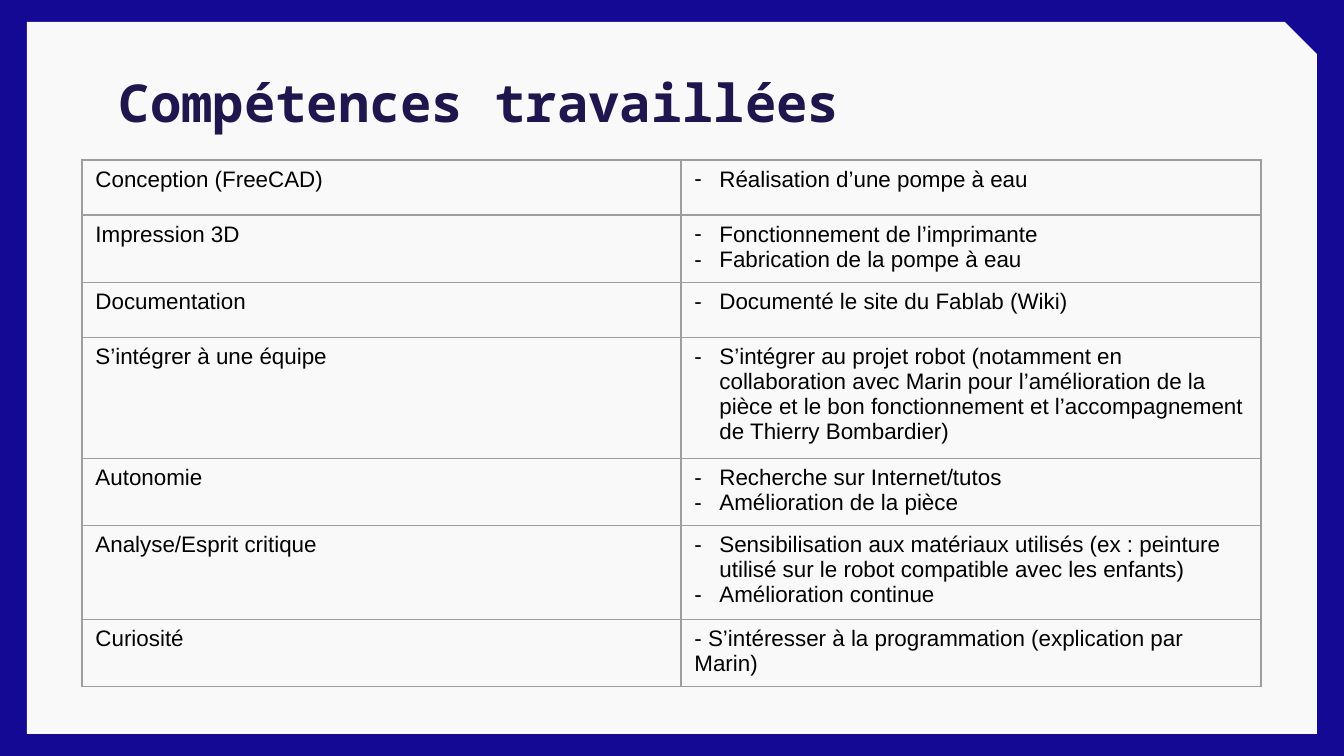
"""Build the slide listing the skills practised, as a two-column table."""
from dataclasses import dataclass

from lxml.etree import SubElement
from pptx import Presentation
from pptx.dml.color import RGBColor
from pptx.enum.shapes import MSO_SHAPE
from pptx.enum.text import MSO_ANCHOR
from pptx.oxml.ns import qn
from pptx.util import Emu, Pt

TITLE = "Compétences travaillées"
SKILLS = [
    ("Conception (FreeCAD)", ["Réalisation d’une pompe à eau"]),
    ("Impression 3D", ["Fonctionnement de l’imprimante", "Fabrication de la pompe à eau"]),
    ("Documentation", ["Documenté le site du Fablab (Wiki)"]),
    ("S’intégrer à une équipe", [
        "S’intégrer au projet robot (notamment en collaboration avec Marin pour "
        "l’amélioration de la pièce et le bon fonctionnement et l’accompagnement "
        "de Thierry Bombardier)"]),
    ("Autonomie", ["Recherche sur Internet/tutos", "Amélioration de la pièce"]),
    ("Analyse/Esprit critique", [
        "Sensibilisation aux matériaux utilisés (ex : peinture utilisé sur le robot "
        "compatible avec les enfants)",
        "Amélioration continue"]),
    ("Curiosité", "- S’intéresser à la programmation (explication par Marin)"),
]

PAGE_SIZE = (1344, 756)
PANEL = (27, 22, 1290, 712)
TITLE_BOX = (106, 48, 1133, 85)
TABLE_AT = (82, 160)
COLUMNS = (599, 580)
ROW_HEIGHTS = {1: 55, 2: 64, 3: 89, 4: 113}
LINES = (1, 2, 1, 4, 2, 3, 2)
INDENT = 25


@dataclass(frozen=True)
class Theme:
    frame: RGBColor = RGBColor(0x13, 0x09, 0x94)
    panel: RGBColor = RGBColor(0xF9, 0xF9, 0xF9)
    title: RGBColor = RGBColor(0x1F, 0x16, 0x4D)
    body: RGBColor = RGBColor(0, 0, 0)
    border: RGBColor = RGBColor(0x9E, 0x9E, 0x9E)
    title_font: str = "Noto Sans Mono"
    body_font: str = "Arial"
    title_size: int = 28
    body_size: int = 12
    border_width: float = 0.75


THEME = Theme()


def px(length):
    return Emu(round(length * 914400 / 134.4))


def style(font, name, size, color, bold=False):
    font.name, font.size, font.bold = name, Pt(size), bold
    font.color.rgb = color


def add_dash(para):
    properties = para._p.get_or_add_pPr()
    properties.set("marL", str(px(INDENT)))
    properties.set("indent", str(-px(INDENT)))
    color = SubElement(properties, qn("a:buClr"))
    SubElement(color, qn("a:srgbClr"), val=str(THEME.body))
    SubElement(properties, qn("a:buFont"), typeface=THEME.body_font)
    SubElement(properties, qn("a:buChar"), char="-")


def add_borders(cell):
    properties = cell._tc.get_or_add_tcPr()
    for side in ("lnL", "lnR", "lnT", "lnB"):
        line = SubElement(properties, qn(f"a:{side}"), w=str(Pt(THEME.border_width)))
        fill = SubElement(line, qn("a:solidFill"))
        SubElement(fill, qn("a:srgbClr"), val=str(THEME.border))


def fill_cell(cell, content):
    dashed = isinstance(content, list)
    cell.text_frame.text = "\n".join(content) if dashed else content
    for para in cell.text_frame.paragraphs:
        if dashed:
            add_dash(para)
        for span in para.runs:
            style(span.font, THEME.body_font, THEME.body_size, THEME.body)
    add_borders(cell)
    cell.fill.background()


def add_panel(page):
    panel = page.shapes.add_shape(MSO_SHAPE.SNIP_1_RECTANGLE, *map(px, PANEL))
    panel.adjustments[0] = 0.045
    panel.shadow.inherit = False
    panel.fill.solid()
    panel.fill.fore_color.rgb = THEME.panel
    panel.line.fill.background()


def add_title(page):
    box = page.shapes.add_textbox(*map(px, TITLE_BOX))
    frame = box.text_frame
    frame.word_wrap = True
    frame.vertical_anchor = MSO_ANCHOR.TOP
    frame.margin_left = frame.margin_right = frame.margin_top = frame.margin_bottom = px(13)
    frame.text = TITLE
    para = frame.paragraphs[0]
    para.line_spacing = 1.15
    style(para.runs[0].font, THEME.title_font, THEME.title_size, THEME.title, bold=True)


def add_skills(page):
    heights = [ROW_HEIGHTS[count] for count in LINES]
    size = (sum(COLUMNS), sum(heights))
    table = page.shapes.add_table(len(SKILLS), len(COLUMNS), *map(px, TABLE_AT + size)).table
    table.first_row = table.horz_banding = False
    for column, width in zip(table.columns, COLUMNS):
        column.width = px(width)
    for row, height, contents in zip(table.rows, heights, SKILLS):
        row.height = px(height)
        for cell, content in zip(row.cells, contents):
            fill_cell(cell, content)


def main():
    deck = Presentation()
    deck.slide_width, deck.slide_height = map(px, PAGE_SIZE)
    page = deck.slides.add_slide(deck.slide_layouts[6])
    page.background.fill.solid()
    page.background.fill.fore_color.rgb = THEME.frame
    add_panel(page)
    add_title(page)
    add_skills(page)
    deck.save("out.pptx")


if __name__ == "__main__":
    main()
